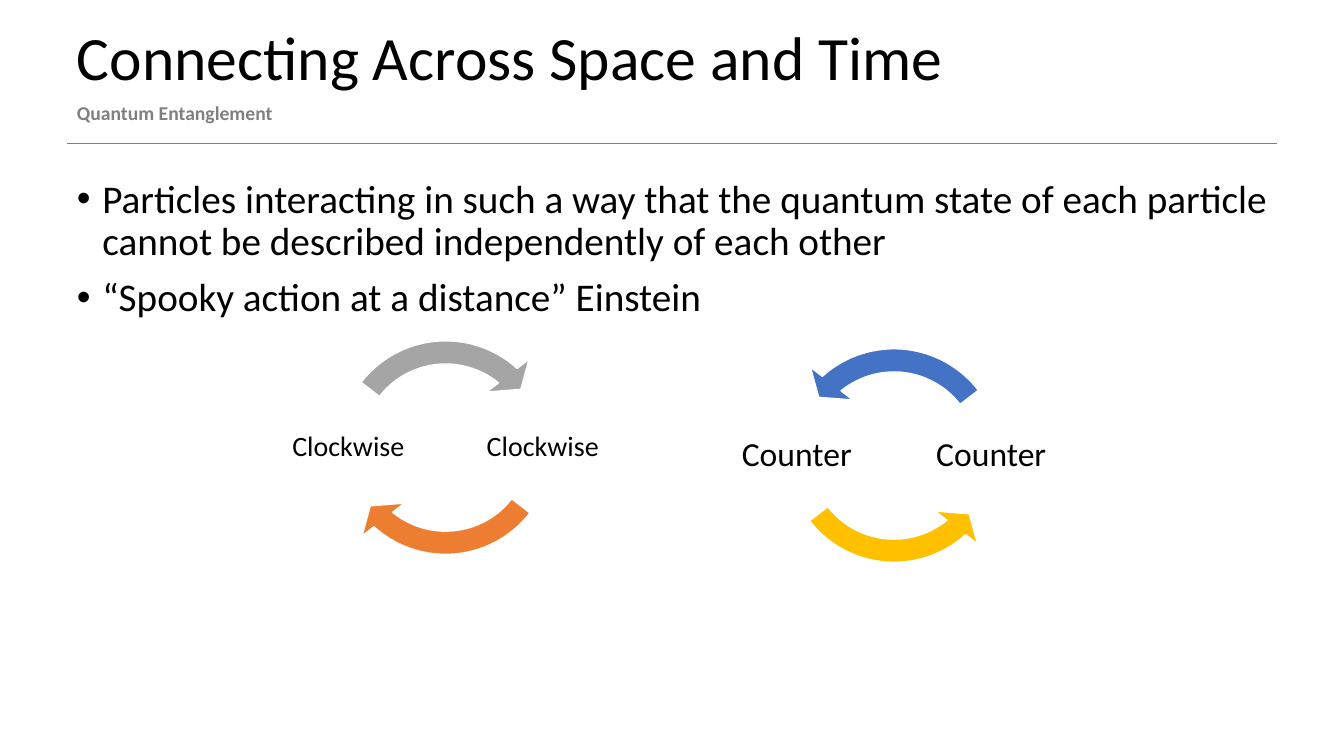
import pptx
import pptx.util
import pptx.dml.color
import pptx.enum.shapes
import pptx.enum.text
import pptx.oxml.ns
from lxml import etree

Cm, Pt = pptx.util.Cm, pptx.util.Pt
RGB = pptx.dml.color.RGBColor
SHAPE = pptx.enum.shapes.MSO_SHAPE
ANCHOR = pptx.enum.text.MSO_ANCHOR
ALIGN = pptx.enum.text.PP_ALIGN
qn = pptx.oxml.ns.qn

BLACK = RGB(0x00, 0x00, 0x00)
WHITE = RGB(0xFF, 0xFF, 0xFF)
GREY = RGB(0x80, 0x80, 0x80)
SILVER = RGB(0xA5, 0xA5, 0xA5)
ORANGE = RGB(0xED, 0x7D, 0x31)
GOLD = RGB(0xFF, 0xC0, 0x00)
BLUE = RGB(0x44, 0x72, 0xC4)

LEFT, WIDTH = 1.69, 30.48
RING, LABEL, LABEL_OFFSET = 6.15, 3, 2.45
DEGREE = 0.6


class Deck:
    font = "Calibri"
    line_spacing = 0.9

    def __init__(self, prs):
        self.s = prs.slides.add_slide(prs.slide_layouts[6])

    def text(self, box, lines, size, color=BLACK, bold=False, bullet=False,
             align=ALIGN.LEFT, anchor=ANCHOR.TOP, inset=None):
        sp = self.s.shapes.add_textbox(*map(Cm, box))
        tf = sp.text_frame
        frame = {"word_wrap": True, "vertical_anchor": anchor}
        if inset is not None:
            for side in ("left", "right", "top", "bottom"):
                frame["margin_" + side] = Cm(inset)
        self.apply(tf, frame)
        for i, line in enumerate(lines):
            p = tf.paragraphs[0] if i == 0 else tf.add_paragraph()
            self.apply(p, {"alignment": align, "line_spacing": self.line_spacing})
            if i:
                p.space_before = Pt(10)
            if bullet:
                self.bullet(p)
            r = p.add_run()
            r.text = line
            self.apply(r.font, {"name": self.font, "size": Pt(size), "bold": bold})
            r.font.color.rgb = color

    def apply(self, target, values):
        for name, value in values.items():
            setattr(target, name, value)

    def bullet(self, p):
        pPr = p._p.get_or_add_pPr()
        pPr.set("marL", str(Cm(0.64)))
        pPr.set("indent", str(-Cm(0.64)))
        etree.SubElement(pPr, qn("a:buFont")).set("typeface", "Arial")
        etree.SubElement(pPr, qn("a:buChar")).set("char", "•")

    def rule(self, y):
        line = self.s.shapes.add_connector(
            pptx.enum.shapes.MSO_CONNECTOR.STRAIGHT,
            Cm(LEFT), Cm(y), Cm(LEFT + WIDTH), Cm(y))
        line.line.width = Pt(0.5)
        line.line.color.rgb = GREY
        etree.SubElement(line._element.spPr, qn("a:effectLst"))

    def arrow(self, kind, cx, cy, color, head, tail):
        sp = self.s.shapes.add_shape(
            kind, Cm(cx - RING / 2), Cm(cy - RING / 2), Cm(RING), Cm(RING))
        values = (0.095, 11.41 * DEGREE, head * DEGREE, tail * DEGREE, 0.11)
        for i, value in enumerate(values):
            sp.adjustments[i] = value
        sp.shadow.inherit = False
        sp.fill.solid()
        sp.fill.fore_color.rgb = color
        sp.line.color.rgb = WHITE
        sp.line.width = Pt(1)

    def cycle(self, kind, cx, cy, word, size, colors, head, tail):
        for i, color in enumerate(colors):
            self.arrow(kind, cx, cy, color, head + 180 * i, tail + 180 * i)
        for dx in (-LABEL_OFFSET, LABEL_OFFSET):
            box = (cx + dx - LABEL / 2, cy - LABEL / 2, LABEL, LABEL)
            self.text(box, [word], size, align=ALIGN.CENTER,
                      anchor=ANCHOR.MIDDLE, inset=0.07)


def main():
    prs = pptx.Presentation()
    prs.slide_width, prs.slide_height = Cm(33.87), Cm(19.05)
    deck = Deck(prs)
    deck.rule(3.6)
    deck.text((LEFT, 0.46, WIDTH, 2.03), ["Connecting Across Space and Time"],
              44, anchor=ANCHOR.BOTTOM)
    deck.text((LEFT, 2.49, WIDTH, 1.12), ["Quantum Entanglement"],
              14, color=GREY, bold=True)
    deck.text((LEFT, 4.39, WIDTH, 12.62), [
        "Particles interacting in such a way that the quantum state of each "
        "particle cannot be described independently of each other",
        "“Spooky action at a distance” Einstein",
    ], 28, bullet=True)
    deck.cycle(SHAPE.CIRCULAR_ARROW, 11.23, 11.28, "Clockwise", 20,
               (ORANGE, SILVER), head=130.88, tail=37.72)
    deck.cycle(SHAPE.LEFT_CIRCULAR_ARROW, 22.53, 11.48, "Counter", 24,
               (GOLD, BLUE), head=49.12, tail=142.28)
    prs.save("out.pptx")


if __name__ == "__main__":
    main()
